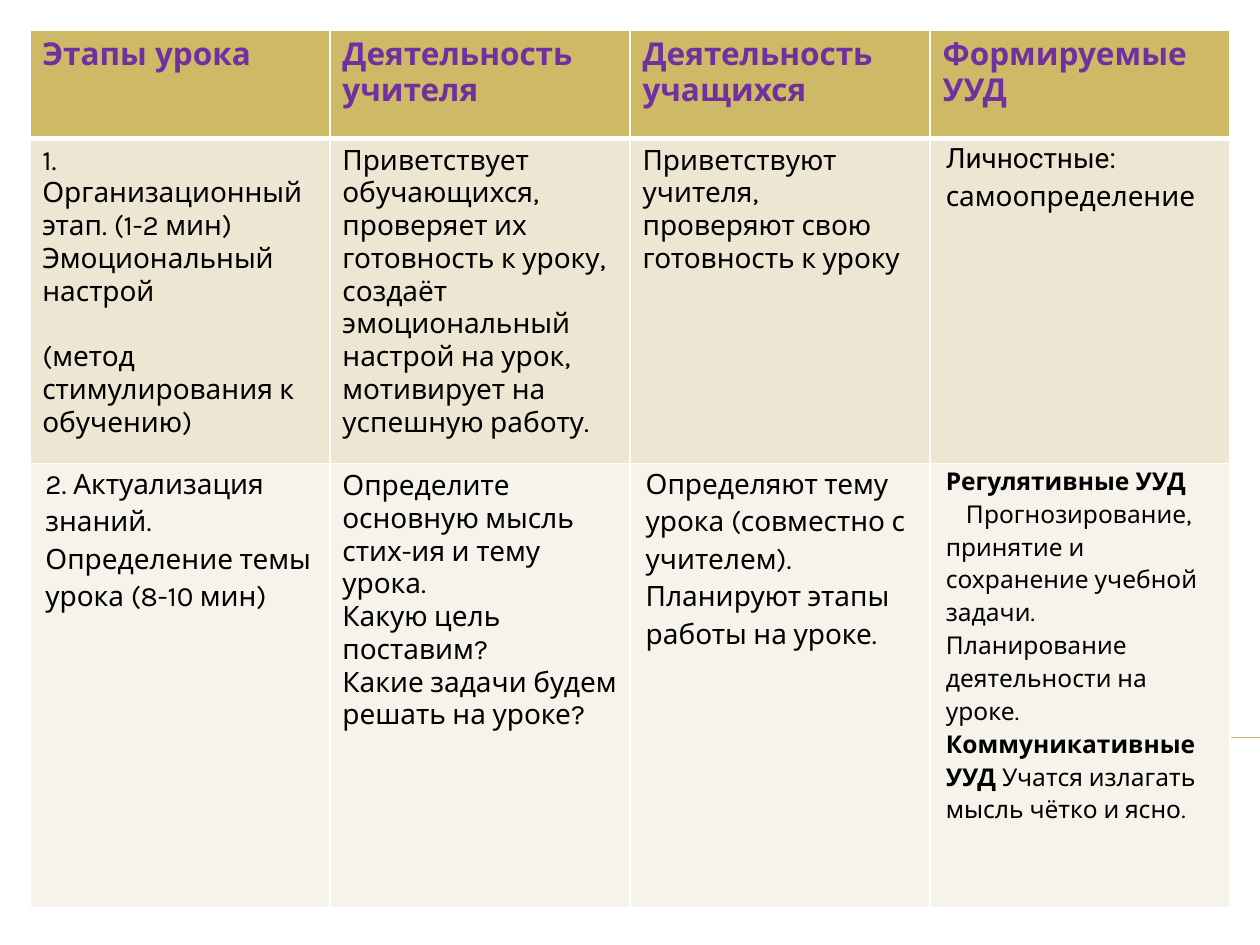
from pptx import Presentation
from pptx.dml.color import RGBColor
from pptx.enum.shapes import MSO_CONNECTOR
from pptx.oxml.ns import qn
from pptx.util import Pt
from lxml import etree

STRAIGHT = MSO_CONNECTOR.STRAIGHT
COLORS = {"gold": "CEB966", "sand": "EDE6D3", "cream": "F6F3EA",
          "purple": "7030A0", "black": "000000", "white": "FFFFFF"}
FONT, LATIN_FONT = "Karla", "Roboto"

HEADERS = ["Этапы урока", "Деятельность учителя", "Деятельность учащихся", "Формируемые УУД"]
STAGE_ONE = [
    {"paragraphs": ["1.", "Организационный", "этап. (1-2 мин)", "Эмоциональный", "настрой",
                    "(метод", "стимулирования к", "обучению)"], "gap_before": {5: 18.7}},
    {"paragraphs": ["Приветствует обучающихся, проверяет их готовность к уроку, создаёт "
                    "эмоциональный настрой на урок, мотивирует на успешную работу."]},
    {"paragraphs": ["Приветствуют учителя, проверяют свою готовность к уроку"]},
    {"paragraphs": [[("Личностные: ", {"font": LATIN_FONT}), ("самоопределение", {})]], "loose": True},
]
STAGE_TWO = [
    {"paragraphs": ["2. Актуализация знаний. Определение темы урока (8-10 мин)"], "loose": True},
    {"paragraphs": ["Определите основную мысль стих-ия и тему урока.", "Какую цель поставим?",
                    "Какие задачи будем решать на уроке?"]},
    {"paragraphs": ["Определяют тему урока (совместно с учителем). Планируют этапы работы на уроке."],
     "loose": True},
    {"paragraphs": [
        [("Регулятивные УУД", {"bold": True})],
        "Прогнозирование, принятие и сохранение учебной задачи.",
        "Планирование деятельности на уроке.",
        [("Коммуникативные УУД ", {"bold": True}), ("Учатся излагать мысль чётко и ясно.", {})],
    ], "loose": True, "size": 14, "indent": {1: 11.5}},
]
ROWS = [
    {"height": 62, "fill": "gold", "color": "purple", "size": 18, "bold": True,
     "cells": [{"paragraphs": [header]} for header in HEADERS]},
    {"height": 186, "fill": "sand", "color": "black", "size": 16, "bold": False, "cells": STAGE_ONE},
    {"height": 254, "fill": "cream", "color": "black", "size": 16, "bold": False, "cells": STAGE_TWO},
]
TABLE_LEFT, TABLE_TOP, COLUMN_WIDTH = 17, 17, 171.5


def rgb(name):
    return RGBColor.from_string(COLORS[name])


def add_borders(cell, bottom_width, top_width):
    properties = cell._tc.get_or_add_tcPr()
    for side, width in (("L", 1), ("R", 1), ("T", top_width), ("B", bottom_width)):
        line = etree.SubElement(properties, qn(f"a:ln{side}"), w=str(Pt(width)))
        fill = etree.SubElement(line, qn("a:solidFill"))
        etree.SubElement(fill, qn("a:srgbClr"), val=COLORS["white"])


def write_cell(cell, content, row):
    loose = content.get("loose", False)
    if loose:
        cell.margin_left = cell.margin_right = Pt(9)
        cell.margin_top = cell.margin_bottom = 0
    last = len(content["paragraphs"]) - 1
    for index, runs in enumerate(content["paragraphs"]):
        frame = cell.text_frame
        paragraph = frame.add_paragraph() if index else frame.paragraphs[0]
        if loose:
            paragraph.line_spacing = 1.15
            paragraph.space_after = Pt(10 if index == last else 0)
        if index in content.get("gap_before", {}):
            paragraph.space_before = Pt(content["gap_before"][index])
        if index in content.get("indent", {}):
            paragraph._p.get_or_add_pPr().set("indent", str(Pt(content["indent"][index])))
        for text, style in [(runs, {})] if isinstance(runs, str) else runs:
            run = paragraph.add_run()
            run.text = text
            run.font.name = style.get("font", FONT)
            run.font.size = Pt(content.get("size", row["size"]))
            run.font.bold = style.get("bold", row["bold"])
            run.font.color.rgb = rgb(row["color"])


def main():
    presentation = Presentation()
    presentation.slide_width, presentation.slide_height = Pt(720), Pt(540)
    slide = presentation.slides.add_slide(presentation.slide_layouts[6])

    rule = slide.shapes.add_connector(STRAIGHT, Pt(40), Pt(421.5), Pt(720), Pt(421.5))
    rule.line.color.rgb = rgb("gold")
    rule.line.width = Pt(0.75)
    etree.SubElement(rule._element.spPr, qn("a:effectLst"))

    columns = len(HEADERS)
    table = slide.shapes.add_table(
        len(ROWS), columns, Pt(TABLE_LEFT), Pt(TABLE_TOP),
        Pt(COLUMN_WIDTH * columns), Pt(sum(row["height"] for row in ROWS))).table
    for column in table.columns:
        column.width = Pt(COLUMN_WIDTH)
    for row_index, row in enumerate(ROWS):
        table.rows[row_index].height = Pt(row["height"])
        for column_index, content in enumerate(row["cells"]):
            cell = table.cell(row_index, column_index)
            add_borders(cell, 3 if row_index == 0 else 1, 3 if row_index == 1 else 1)
            cell.fill.solid()
            cell.fill.fore_color.rgb = rgb(row["fill"])
            write_cell(cell, content, row)

    presentation.save("out.pptx")


if __name__ == "__main__":
    main()
